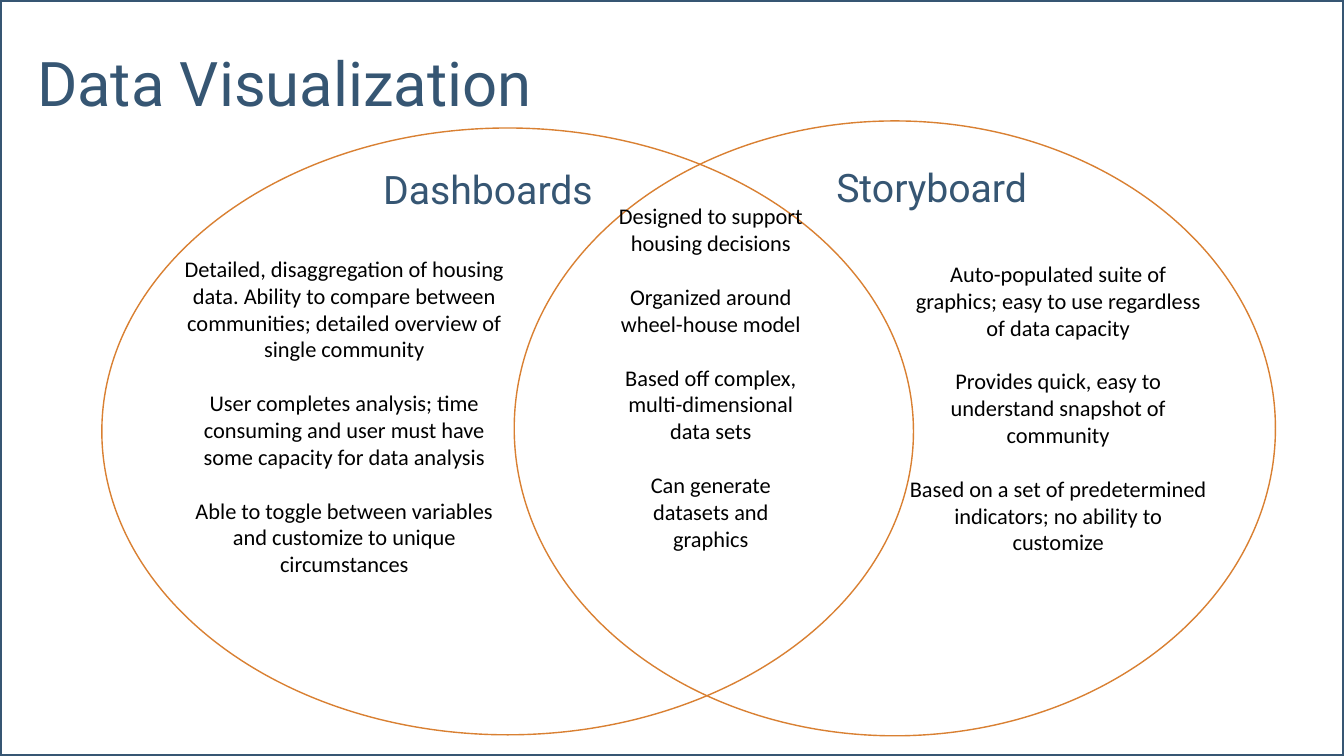
from pptx import Presentation, util as u
from pptx.dml.color import RGBColor
from pptx.enum import shapes, text

NAVY, ORANGE, BLACK = "365673", "D98032", "000000"
BODY_GAP = 19.2  # one line of body text, in points

DASHBOARD_POINTS = [
    "Detailed, disaggregation of housing data. Ability to compare between "
    "communities; detailed overview of single community",
    "User completes analysis; time consuming and user must have some "
    "capacity for data analysis",
    "Able to toggle between variables and customize to unique circumstances",
]
SHARED_POINTS = [
    "Designed to support housing decisions",
    "Organized around wheel-house model",
    "Based off complex, multi-dimensional data sets",
    "Can generate datasets and graphics",
]
STORYBOARD_POINTS = [
    "Auto-populated suite of graphics; easy to use regardless of data capacity",
    "Provides quick, easy to understand snapshot of community",
    "Based on a set of predetermined indicators; no ability to customize",
]


def color(hex_value):
    return RGBColor.from_string(hex_value)


def box(bounds):
    return [u.Inches(length) for length in bounds]


def add_outline(slide, preset, bounds, line_color, line_width):
    outline = slide.shapes.add_shape(preset, *box(bounds))
    outline.shadow.inherit = False
    outline.fill.background()
    outline.line.color.rgb = color(line_color)
    outline.line.width = u.Pt(line_width)


def add_text(slide, bounds, paragraphs, size, font, text_color,
             align=text.PP_ALIGN.CENTER, anchor=text.MSO_ANCHOR.TOP,
             gap=0, line_spacing=1.0):
    """Write one paragraph per string, with gap points between them."""
    frame = slide.shapes.add_textbox(*box(bounds)).text_frame
    frame.word_wrap = True
    frame.vertical_anchor = anchor
    for index, words in enumerate(paragraphs):
        paragraph = frame.add_paragraph() if index else frame.paragraphs[0]
        paragraph.alignment = align
        paragraph.line_spacing = line_spacing
        if index:
            paragraph.space_before = u.Pt(gap)
        run = paragraph.add_run()
        run.text = words
        run.font.size = u.Pt(size)
        run.font.name = font
        run.font.color.rgb = color(text_color)


def add_heading(slide, bounds, words):
    add_text(slide, bounds, [words], 28, "Roboto", NAVY)


def add_points(slide, bounds, points):
    add_text(slide, bounds, points, 16, "Calibri", BLACK, gap=BODY_GAP)


def main():
    deck = Presentation()
    deck.slide_width, deck.slide_height = u.Inches(13.33), u.Inches(7.5)
    slide = deck.slides.add_slide(deck.slide_layouts[6])

    preset = shapes.MSO_SHAPE
    add_outline(slide, preset.RECTANGLE, (0, 0, 13.33, 7.5), NAVY, 2.25)
    add_text(slide, (0.27, 0.13, 11.5, 1.45), ["Data Visualization"],
             44, "Roboto", NAVY, align=text.PP_ALIGN.LEFT,
             anchor=text.MSO_ANCHOR.MIDDLE, line_spacing=0.9)

    for circle in ((5.1, 1.2, 7.55, 6.1), (1.01, 1.27, 8.05, 6.02)):
        add_outline(slide, preset.OVAL, circle, ORANGE, 1)

    add_points(slide, (1.73, 2.48, 3.37, 4.44), DASHBOARD_POINTS)
    add_points(slide, (6.01, 1.96, 2.08, 4.41), SHARED_POINTS)
    add_points(slide, (8.9, 2.53, 3.19, 4.24), STORYBOARD_POINTS)
    add_heading(slide, (3.66, 1.59, 2.36, 0.57), "Dashboards")
    add_heading(slide, (7.97, 1.57, 2.54, 0.57), "Storyboard")

    deck.save("out.pptx")


if __name__ == "__main__":
    main()
